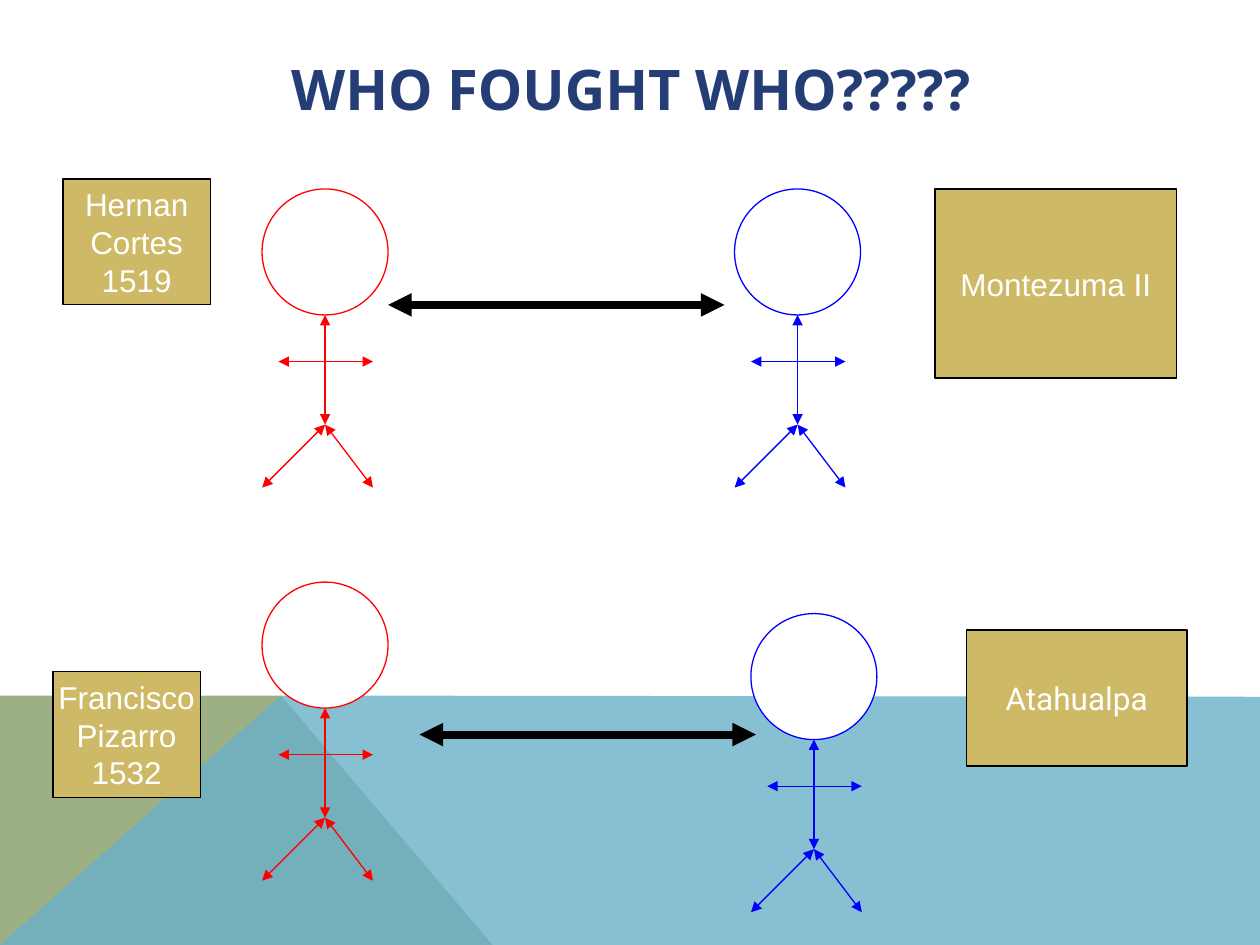
from lxml import etree
from pptx import Presentation
from pptx.dml.color import RGBColor
from pptx.enum.shapes import MSO_CONNECTOR, MSO_SHAPE
from pptx.enum.text import MSO_ANCHOR, MSO_AUTO_SIZE, PP_ALIGN
from pptx.oxml.ns import qn
from pptx.util import Inches, Pt

STRAIGHT = MSO_CONNECTOR.STRAIGHT
OVAL, RECTANGLE = MSO_SHAPE.OVAL, MSO_SHAPE.RECTANGLE
MIDDLE, CENTER = MSO_ANCHOR.MIDDLE, PP_ALIGN.CENTER
NO_AUTOFIT = MSO_AUTO_SIZE.NONE
TITLE_ONLY = 5
RED, BLUE, BLACK, WHITE, GOLD = "FF0000", "0000FF", "000000", "FFFFFF", "CEB966"


def rgb(value):
    return RGBColor.from_string(value)


def add_arrow(shapes, start, end, color, width):
    """Draw a straight line with an arrowhead at both ends."""
    arrow = shapes.add_connector(STRAIGHT, *map(Inches, start + end))
    arrow.line.color.rgb = rgb(color)
    arrow.line.width = Pt(width)
    line = arrow.line._get_or_add_ln()
    for tag in ("a:headEnd", "a:tailEnd"):
        etree.SubElement(line, qn(tag), type="triangle")
    etree.SubElement(arrow._element.spPr, qn("a:effectLst"))


deck = Presentation()
deck.slide_width, deck.slide_height = Inches(10), Inches(7.5)
page = deck.slides.add_slide(deck.slide_layouts[TITLE_ONLY])

# Background bands: points, colour, opacity in percent
bands = [
    ([(0, 7.5), (0, 5.52), (2.23, 5.52), (3.91, 7.5)], "9CB084", 100),
    ([(0, 7.5), (2.23, 5.52), (10, 5.53), (10, 7.5)], "6BB1C9", 80),
]
for points, color, opacity in bands:
    corners = [(Inches(x), Inches(y)) for x, y in points]
    builder = page.shapes.build_freeform(*corners[0])
    builder.add_line_segments(corners[1:], close=True)
    band = builder.convert_to_shape()
    band.shadow.inherit = False
    band.fill.solid()
    band.fill.fore_color.rgb = rgb(color)
    band.line.fill.background()
    if opacity < 100:
        color_element = band._element.spPr.find(qn("a:solidFill"))[0]
        etree.SubElement(color_element, qn("a:alpha"), val=str(opacity * 1000))

# Title
title = page.shapes.title
title.left, title.top = Inches(0.9), Inches(0.4)
title.width, title.height = Inches(8.22), Inches(0.6)
title.text_frame.text = "WHO FOUGHT WHO?????"
title.text_frame.auto_size = NO_AUTOFIT
title.text_frame.vertical_anchor = MIDDLE
heading = title.text_frame.paragraphs[0]
heading.alignment = CENTER
heading.font.name, heading.font.size, heading.font.bold = "Open Sans", Pt(32), True
heading.font.color.rgb = rgb("253D75")

# Stick figures: limbs are offsets from the top left of the head
limbs = [
    ((0.5, 1), (0.5, 1.87)),
    ((0.5, 1.87), (0, 2.37)),
    ((0.5, 1.87), (0.88, 2.37)),
    ((0.13, 1.37), (0.88, 1.37)),
]
figures = [(2.08, 1.5, RED), (5.83, 1.5, BLUE), (2.08, 4.62, RED), (5.96, 4.87, BLUE)]
for left, top, color in figures:
    figure = page.shapes.add_group_shape()
    head = figure.shapes.add_shape(OVAL, Inches(left), Inches(top), Inches(1), Inches(1))
    head.shadow.inherit = False
    head.fill.solid()
    head.fill.fore_color.rgb = rgb(WHITE)
    head.line.color.rgb = rgb(color)
    head.line.width = Pt(0.75)
    for start, end in limbs:
        add_arrow(figure.shapes, (left + start[0], top + start[1]),
                  (left + end[0], top + end[1]), color, 0.75)

# Name boxes
names = [
    ("Hernan\nCortes\n1519", "Arial", 0.5, 1.42, 1.17, 1),
    ("Atahualpa", "Roboto", 7.67, 5, 1.75, 1.08),
    ("Montezuma II", "Arial", 7.42, 1.5, 1.92, 1.5),
    ("Francisco\nPizarro\n1532", "Arial", 0.42, 5.33, 1.17, 1),
]
for text, font, *place in names:
    box = page.shapes.add_shape(RECTANGLE, *map(Inches, place))
    box.shadow.inherit = False
    box.fill.solid()
    box.fill.fore_color.rgb = rgb(GOLD)
    box.line.color.rgb = rgb(BLACK)
    box.line.width = Pt(0.75)
    frame = box.text_frame
    frame.text = text
    frame.word_wrap = False
    frame.vertical_anchor = MIDDLE
    for para in frame.paragraphs:
        para.alignment = CENTER
        para.font.name, para.font.size = font, Pt(18)
        para.font.color.rgb = rgb(WHITE)

# Arrows between the opponents
for left, top in [(3.08, 2.42), (3.33, 5.83)]:
    add_arrow(page.shapes, (left, top), (left + 2.67, top), BLACK, 4.5)

deck.save("out.pptx")
